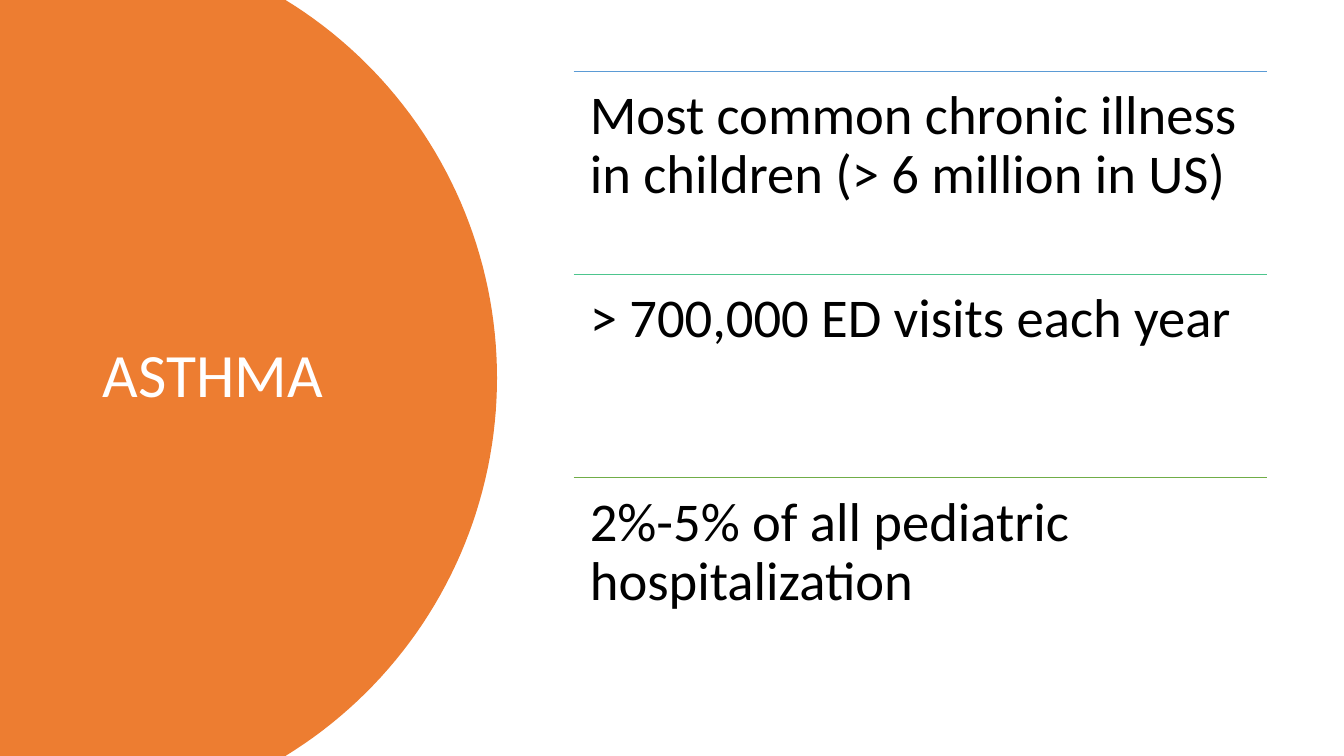
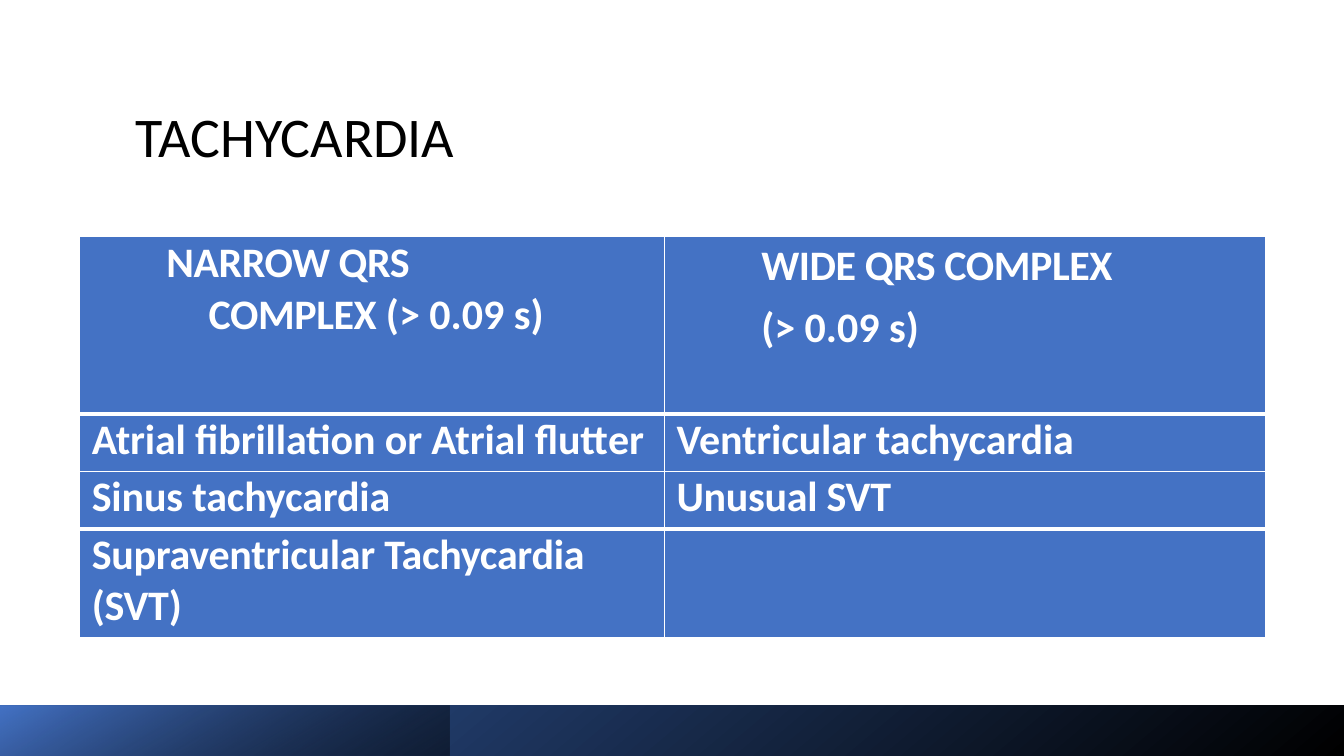
"""Build two clinical slides: asthma facts and tachycardia types."""
import math

import pptx
import pptx.dml.color
import pptx.enum.shapes
import pptx.enum.text
import pptx.oxml
import pptx.oxml.ns
import pptx.util
from lxml import etree

WIDTH, HEIGHT = 13.33, 7.5
FONT = "Calibri"
WHITE, BLACK, BLUE, NAVY, ORANGE = "FFFFFF", "000000", "4472C4", "2F5597", "ED7D31"

FACTS = [
    ("Most common chronic illness in children (> 6 million in US)", "5B9BD5"),
    ("> 700,000 ED visits each year", "4DC58D"),
    ("2%-5% of all pediatric hospitalization", "70AD47"),
]
FACT_LEFT, FACT_TOP, FACT_WIDTH, FACT_PITCH = 5.69, 0.71, 6.88, 2.015
DISC_RADIUS, DISC_RIGHT = 4.4, 4.93

HEADERS = [
    {"lines": [[("NARROW QRS COMPLEX ", -0.3), ("(> 0.09 s)", 0)]],
     "margin": 1.28, "indent": -0.42, "right": 1, "line_spacing": 1.01},
    {"lines": [[("WIDE QRS COMPLEX", -0.3)], [("(> 0.09 s)", 0)]],
     "margin": 1.27, "indent": -0.31, "line_spacing": 1.07},
]
RHYTHMS = [
    [("Atrial fibrillation or Atrial flutter", -0.1), ("Ventricular tachycardia", -0.1)],
    [("Sinus tachycardia", -0.1), ("Unusual SVT", -0.2)],
    [("Supraventricular Tachycardia (SVT)", -0.2)],
]
TABLE_LEFT, TABLE_TOP = 0.79, 2.35
COLUMNS = [5.8, 5.96]
ROWS = [1.76, 0.57, 0.57, 1.08]
THICK_RULES = (1, 3)

BAND_TOP, BAND_HEIGHT = 7, 0.5
BANDS = [
    (WIDTH, [(0, BLACK, 100), (100, NAVY, 100)], 230),
    (4.46, [(0, BLACK, 46), (99, BLUE, 100)], 240),
]


def color(value):
    return pptx.dml.color.RGBColor.from_string(value)


def inches(*values):
    return [pptx.util.Inches(value) for value in values]


def write_text(frame, lines, size, fill=BLACK, bold=False, line_spacing=0.9,
               margin=0, indent=0, right=0, space_before=0):
    for index, line in enumerate(lines):
        paragraph = frame.add_paragraph() if index else frame.paragraphs[0]
        paragraph.line_spacing = line_spacing
        if index:
            paragraph.space_before = pptx.util.Pt(space_before)
        properties = paragraph._p.get_or_add_pPr()
        for name, value in (("marL", margin), ("marR", right), ("indent", indent)):
            properties.set(name, str(pptx.util.Inches(value)))
        for text, spacing in line:
            run = paragraph.add_run()
            run.text = text
            run.font.name, run.font.size, run.font.bold = FONT, pptx.util.Pt(size), bold
            run.font.color.rgb = color(fill)
            if spacing:
                run.font._element.set("spc", str(round(spacing * 100)))


def add_text(slide, box, text, size, inset=(0.1, 0.05), middle=False, **formats):
    frame = slide.shapes.add_textbox(*inches(*box)).text_frame
    anchors = pptx.enum.text.MSO_ANCHOR
    frame.word_wrap = True
    frame.vertical_anchor = anchors.MIDDLE if middle else anchors.TOP
    frame.margin_left = frame.margin_right = pptx.util.Inches(inset[0])
    frame.margin_top = frame.margin_bottom = pptx.util.Inches(inset[1])
    write_text(frame, [[(text, 0)]], size, **formats)


def add_title(slide, box, title, size, fill):
    add_text(slide, box, title, size, fill=fill, middle=True)


def add_disc(slide):
    center_x, center_y = DISC_RIGHT - DISC_RADIUS, HEIGHT / 2
    sweep, steps = math.asin(center_y / DISC_RADIUS), 80
    angles = [-sweep + 2 * sweep * step / steps for step in range(steps + 1)]
    arc = [inches(center_x + DISC_RADIUS * math.cos(angle),
                  center_y + DISC_RADIUS * math.sin(angle)) for angle in angles]
    builder = slide.shapes.build_freeform(0, 0)
    builder.add_line_segments(arc + [inches(0, HEIGHT)], close=True)
    shape = builder.convert_to_shape()
    shape.shadow.inherit = False
    shape.fill.solid()
    shape.fill.fore_color.rgb = color(ORANGE)
    shape.line.fill.background()


def add_rule(slide, left, top, width, fill):
    rule = slide.shapes.add_connector(pptx.enum.shapes.MSO_CONNECTOR.STRAIGHT,
                                      *inches(left, top, left + width, top))
    rule.line.color.rgb = color(fill)
    rule.line.width = pptx.util.Pt(1)
    etree.SubElement(rule._element.spPr, pptx.oxml.ns.qn("a:effectLst"))


def add_band(slide, width, stops, angle):
    band = slide.shapes.add_shape(pptx.enum.shapes.MSO_SHAPE.RECTANGLE,
                                  *inches(0, BAND_TOP, width, BAND_HEIGHT))
    band.shadow.inherit = False
    band.line.fill.background()
    band.fill.background()
    stop_xml = "".join(
        f'<a:gs pos="{position * 1000}"><a:srgbClr val="{fill}">'
        f'<a:alpha val="{opacity * 1000}"/></a:srgbClr></a:gs>'
        for position, fill, opacity in stops)
    gradient = pptx.oxml.parse_xml(
        f'<a:gradFill {pptx.oxml.ns.nsdecls("a")} rotWithShape="1"><a:gsLst>{stop_xml}</a:gsLst>'
        f'<a:lin ang="{angle * 60000}" scaled="0"/></a:gradFill>')
    properties = band._element.spPr
    properties.replace(properties.find(pptx.oxml.ns.qn("a:noFill")), gradient)


def format_cell(cell, row):
    cell.margin_left = cell.margin_right = cell.margin_top = cell.margin_bottom = 0
    cell.fill.solid()
    cell.fill.fore_color.rgb = color(BLUE)
    widths = {"L": 1, "R": 1, "T": 3 if row in THICK_RULES else 1,
              "B": 3 if row + 1 in THICK_RULES else 1}
    for index, (side, width) in enumerate(widths.items()):
        border = pptx.oxml.parse_xml(
            f'<a:ln{side} {pptx.oxml.ns.nsdecls("a")} w="{pptx.util.Pt(width)}"><a:solidFill>'
            f'<a:srgbClr val="{WHITE}"/></a:solidFill></a:ln{side}>')
        cell._tc.get_or_add_tcPr().insert(index, border)


def write_cell(cell, lines, **formats):
    write_text(cell.text_frame, lines, 30, fill=WHITE, bold=True, **formats)


def add_rhythm_table(slide):
    box = inches(TABLE_LEFT, TABLE_TOP, sum(COLUMNS), sum(ROWS))
    table = slide.shapes.add_table(len(ROWS), len(COLUMNS), *box).table
    table.first_row = table.horz_banding = False
    for column, width in zip(table.columns, COLUMNS):
        column.width = pptx.util.Inches(width)
    for index, height in enumerate(ROWS):
        table.rows[index].height = pptx.util.Inches(height)
        for cell in table.rows[index].cells:
            format_cell(cell, index)
    for index, header in enumerate(HEADERS):
        write_cell(table.cell(0, index), space_before=5, **header)
    for row, names in enumerate(RHYTHMS, 1):
        for column, name in enumerate(names):
            write_cell(table.cell(row, column), [[name]], margin=0.12, line_spacing=1.0)


def build_asthma(slide):
    add_disc(slide)
    add_title(slide, (0.92, 0.7, 3.23, 6.09), "ASTHMA", 44, WHITE)
    for index, (fact, fill) in enumerate(FACTS):
        top = FACT_TOP + index * FACT_PITCH
        add_rule(slide, FACT_LEFT, top, FACT_WIDTH, fill)
        add_text(slide, (FACT_LEFT, top, FACT_WIDTH, FACT_PITCH), fact, 39, inset=(0.16, 0.16))


def build_tachycardia(slide):
    add_title(slide, (1.25, 0.78, 11.13, 1.2), "TACHYCARDIA", 40, BLACK)
    for band in BANDS:
        add_band(slide, *band)
    add_rhythm_table(slide)


def main():
    presentation = pptx.Presentation()
    presentation.slide_width, presentation.slide_height = inches(WIDTH, HEIGHT)
    for build in (build_asthma, build_tachycardia):
        build(presentation.slides.add_slide(presentation.slide_layouts[6]))
    presentation.save("out.pptx")


if __name__ == "__main__":
    main()
